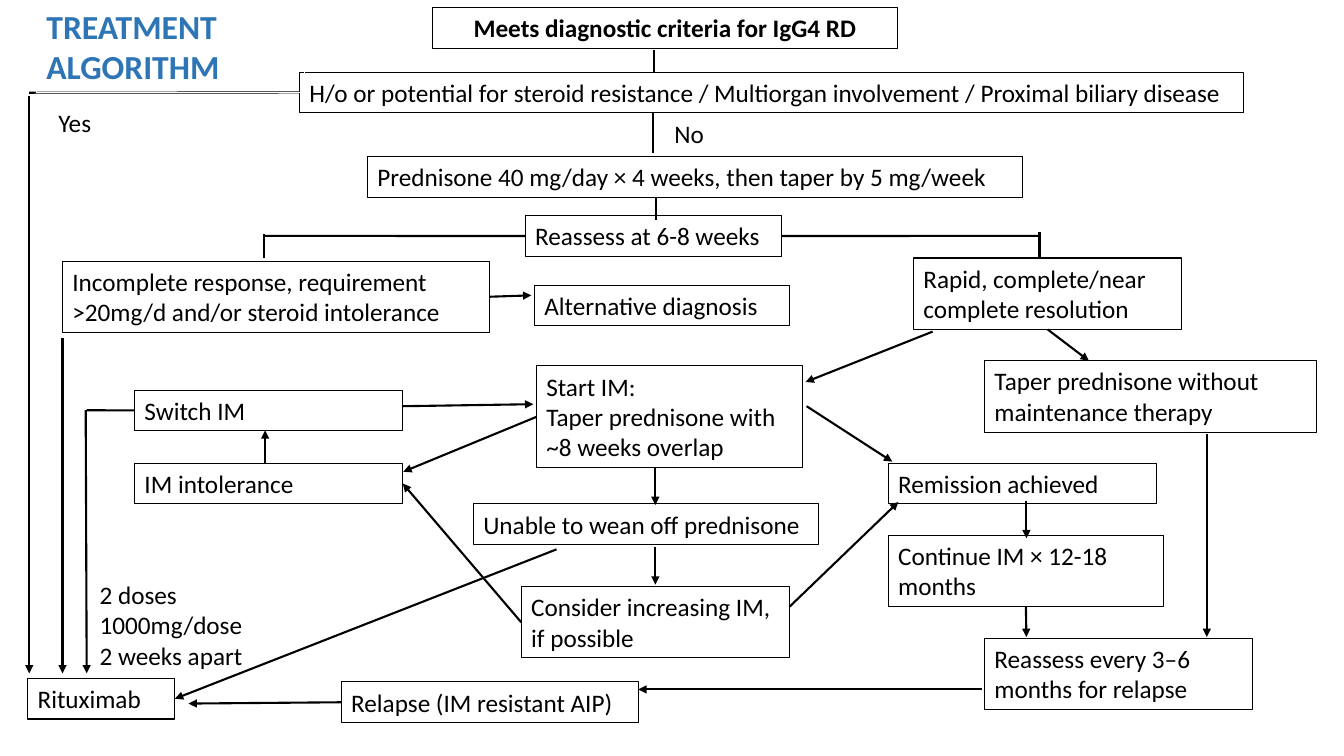
import pptx
import pptx.util
import pptx.dml.color
import pptx.enum.shapes
import pptx.enum.text
import pptx.oxml
import pptx.oxml.ns
from dataclasses import dataclass

COLUMNS, ROWS = 133.3, 75
TOP, LEFT, BOTTOM, RIGHT = range(4)

TITLE = ("TREATMENT\nALGORITHM", 3.6, 0.1, 26.6, 9.1)

STEPS = {
    "criteria": ("Meets diagnostic criteria for IgG4 RD", 42.9, 0.75, 46.1, 1),
    "risk": ("H/o or potential for steroid resistance / Multiorgan involvement / "
             "Proximal biliary disease", 29.7, 7.15, 93.65, 1),
    "prednisone": ("Prednisone 40 mg/day × 4 weeks, then taper by 5 mg/week", 36.45, 15.55, 64.95, 1),
    "reassess": ("Reassess at 6-8 weeks", 52.1, 21.4, 25.4, 1),
    "rapid": ("Rapid, complete/near complete resolution", 90.6, 25.6, 26.6, 2),
    "incomplete": ("Incomplete response, requirement >20mg/d and/or steroid intolerance",
                   6.2, 25.9, 42.4, 2),
    "taper": ("Taper prednisone without maintenance therapy", 97.65, 35.8, 32.9, 2),
    "remission": ("Remission achieved", 88.1, 45.95, 26.6, 1),
    "continue": ("Continue IM × 12-18 months", 88.1, 53.1, 27.3, 2),
    "follow-up": ("Reassess every 3–6 months for relapse", 97.65, 63.3, 26.6, 2),
    "start": ("Start IM:\vTaper prednisone with ~8 weeks overlap", 53.2, 36.3, 26.4, 3),
    "unable": ("Unable to wean off prednisone", 46.95, 50, 34.2, 1),
    "increase": ("Consider increasing IM,\vif possible", 51.7, 58.2, 26.6, 2),
    "switch": ("Switch IM", 13.35, 38.7, 26.6, 1),
    "intolerance": ("IM intolerance", 13.35, 45.95, 26.6, 1),
    "relapse": ("Relapse (IM resistant AIP)", 33.85, 67.65, 29.5, 1),
    "rituximab": ("Rituximab", 2.75, 67.3, 14.6, 1),
    "alternative": ("Alternative diagnosis", 53, 28.3, 25.35, 1),
}

LABELS = [
    ("No", 65.9, 11.2, 11.5, 1),
    ("Yes", 4.8, 10.2, 11.5, 1),
    ("2 doses\n1000mg/dose\n2 weeks apart", 8.9, 57, 17, 3),
]

LINES = [
    (("reassess", LEFT), (26.2, 23.4)),
    (("reassess", RIGHT), (103.1, 23.4)),
    ((26.2, 23.2), (26.2, 25.6)),
    ((103.1, 23), (103.1, 25.5)),
    ((64.9, 5), (64.9, 7.2)),
    ((64.8, 11.2), (64.8, 15.2)),
    ((65.1, 19.6), (65.1, 21.8)),
    (("switch", LEFT), (8.6, 40.7)),
    (("risk", LEFT), (2.9, 9.2)),
]

ARROWS = [
    ((2.9, 9.5), (2.9, 66.8)),
    ((6.2, 33.5), (6.2, 66.8)),
    ((8.5, 40.7), (8.6, 66.8)),
    ((26.3, 46), (26.3, 42.7)),
    ((55.2, 54.5), ("rituximab", RIGHT)),
    ((65, 46.4), (65, 50.1)),
    ((65, 54.3), (65, 58)),
    (("start", LEFT), (40, 46.8)),
    ((101.8, 49.7), (101.8, 53.4)),
    (("continue", BOTTOM), (101.8, 63.2)),
    ((119.7, 43.1), (119.7, 63.2)),
    ((92.5, 32.9), (79.9, 37.9)),
    (("rapid", BOTTOM), (108, 35.8)),
    ((80, 40.3), (88.5, 45.8)),
    (("incomplete", RIGHT), (52.7, 29.3)),
    ((39.9, 40.3), (52.9, 40.1)),
    ((78.3, 60.2), (89.1, 49.8)),
    (("increase", LEFT), ("intolerance", RIGHT)),
    ((97.4, 68.4), (63.3, 68.4)),
    (("relapse", LEFT), (18.7, 69.8)),
]


@dataclass(frozen=True)
class Theme:
    font: str = "Calibri"
    ink: str = "000000"
    accent: str = "2E75B6"
    paper: str = "FFFFFF"
    body_size: float = 18
    title_size: float = 24
    border: float = 0.75
    flow: float = 1.5


theme = Theme()
deck = pptx.Presentation()
deck.slide_width = pptx.util.Inches(13.33)
deck.slide_height = pptx.util.Inches(7.5)
page = deck.slides.add_slide(deck.slide_layouts[5])


def across(columns):
    return round(deck.slide_width * columns / COLUMNS)


def down(rows):
    return round(deck.slide_height * rows / ROWS)


def frame(left, top, width, height):
    return across(left), down(top), across(width), down(height)


def text_height(line_count):
    return 1 + 3.04 * line_count


def color(value):
    return pptx.dml.color.RGBColor.from_string(value)


def set_line(shape, value, width):
    shape.line.color.rgb = color(value)
    shape.line.width = pptx.util.Pt(width)


def write(box, text, size=theme.body_size, ink=theme.ink, bold=False, centered=False):
    text_frame = box.text_frame
    text_frame.text = text
    text_frame.word_wrap = True
    text_frame.auto_size = pptx.enum.text.MSO_AUTO_SIZE.NONE
    text_frame.vertical_anchor = pptx.enum.text.MSO_ANCHOR.TOP
    align = pptx.enum.text.PP_ALIGN
    for para in text_frame.paragraphs:
        para.alignment = align.CENTER if centered else align.LEFT
        para.font.name = theme.font
        para.font.size = pptx.util.Pt(size)
        para.font.bold = bold
        para.font.color.rgb = color(ink)


def add_step(key, text, left, top, width, line_count):
    box = page.shapes.add_shape(pptx.enum.shapes.MSO_SHAPE.RECTANGLE,
                                *frame(left, top, width, text_height(line_count)))
    box.shadow.inherit = False
    box.fill.background()
    set_line(box, theme.ink, theme.border)
    first = key == "criteria"
    write(box, text, bold=first, centered=first)
    return box


def add_flow(start, end, boxes, arrow):
    points = [(0, 0) if place[0] in boxes else (across(place[0]), down(place[1]))
              for place in (start, end)]
    flow = page.shapes.add_connector(pptx.enum.shapes.MSO_CONNECTOR.STRAIGHT,
                                     *points[0], *points[1])
    for place, connect in ((start, flow.begin_connect), (end, flow.end_connect)):
        if place[0] in boxes:
            connect(boxes[place[0]], place[1])
    set_line(flow, theme.ink, theme.flow)
    if arrow:
        head = pptx.oxml.parse_xml(
            f'<a:tailEnd {pptx.oxml.ns.nsdecls("a")} type="triangle"/>')
        flow.element.spPr.find(pptx.oxml.ns.qn("a:ln")).append(head)
    flow.element.spPr.append(
        pptx.oxml.parse_xml(f'<a:effectLst {pptx.oxml.ns.nsdecls("a")}/>'))


def add_title(text, *place):
    title = page.shapes.title
    title.left, title.top, title.width, title.height = frame(*place)
    set_line(title, theme.paper, theme.border)
    write(title, text, theme.title_size, theme.accent, bold=True)
    title.element.getparent().append(title.element)


def main():
    boxes = {key: add_step(key, *step) for key, step in STEPS.items()}
    for flows, arrow in ((LINES, False), (ARROWS, True)):
        for start, end in flows:
            add_flow(start, end, boxes, arrow)
    add_title(*TITLE)
    for text, left, top, width, line_count in LABELS:
        label = page.shapes.add_textbox(*frame(left, top, width, text_height(line_count)))
        write(label, text)
    deck.save("out.pptx")


if __name__ == "__main__":
    main()
